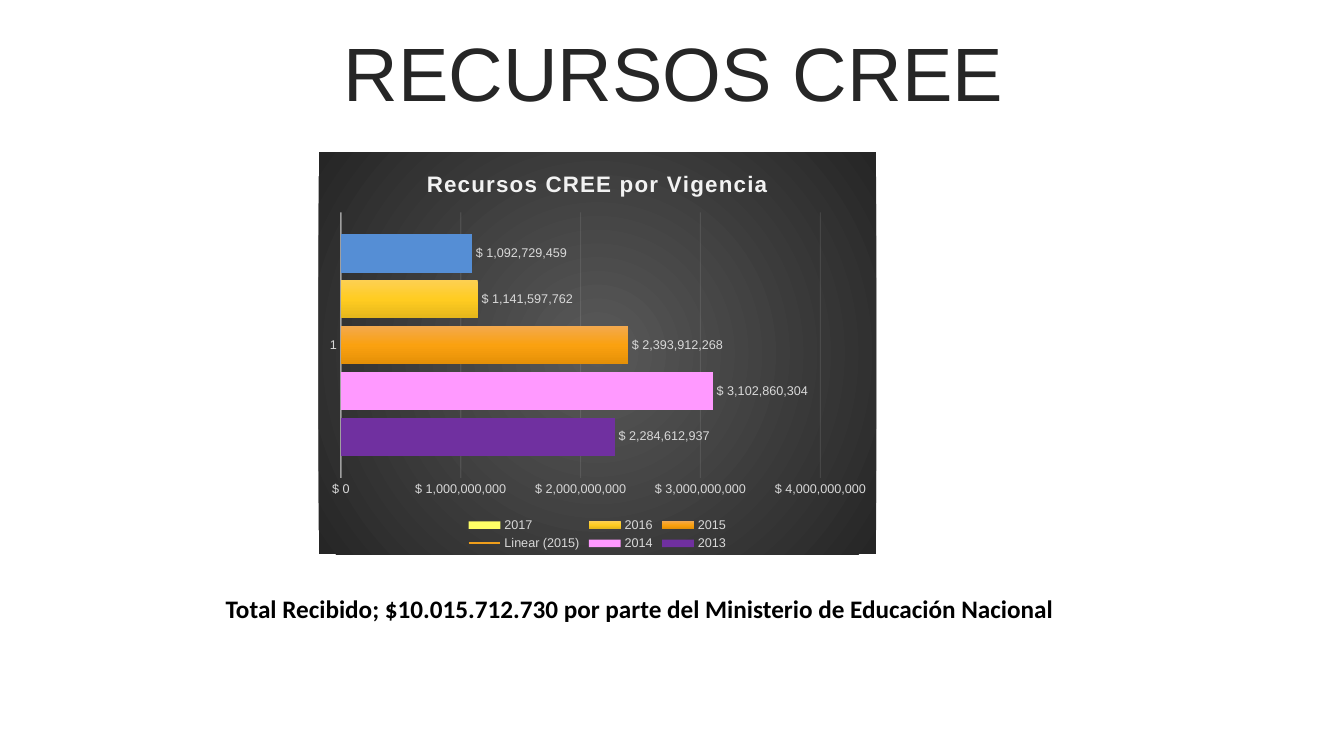
from lxml import etree
from pptx import Presentation
from pptx.chart.data import CategoryChartData
from pptx.dml.color import RGBColor
from pptx.enum import chart as ch, text
from pptx.oxml import parse_xml
from pptx.oxml.ns import nsdecls, qn
from pptx.util import Inches, Pt

WHITE = RGBColor(0xFF, 0xFF, 0xFF)
BLACK = RGBColor(0, 0, 0)
TITLE = RGBColor(0x26, 0x26, 0x26)
PALE = RGBColor(0xF2, 0xF2, 0xF2)
LABEL = RGBColor(0xD9, 0xD9, 0xD9)
PURPLE = RGBColor(0x70, 0x30, 0xA0)
PINK = RGBColor(0xFF, 0x99, 0xFF)
YELLOW = RGBColor(0xFF, 0xFF, 0x66)
BLUE = RGBColor(0x55, 0x8E, 0xD5)
TREND = RGBColor(0xEF, 0x9E, 0x1B)
ORANGES = (RGBColor(0xF3, 0xA9, 0x4E), RGBColor(0xFA, 0xA1, 0x10), RGBColor(0xE5, 0x90, 0x07))
GOLDS = (RGBColor(0xFD, 0xD0, 0x52), RGBColor(0xFF, 0xCC, 0x21), RGBColor(0xE5, 0xB6, 0x1B))
GREYS = (RGBColor(0x59, 0x59, 0x59), RGBColor(0x26, 0x26, 0x26))

PESOS = r"[$$-240A]\ #,##0;\-[$$-240A]\ #,##0"
RESOURCES = [
    ("2013", 2284612937, PURPLE),
    ("2014", 3102860304, PINK),
    ("2015", 2393912268, ORANGES),
    ("2016", 1141597762, GOLDS),
    ("2017", 1092729459, YELLOW),
]
LINEAR = '<a:lin ang="5400000" scaled="0"/>'
RADIAL = '<a:path path="circle"><a:fillToRect l="50000" t="50000" r="50000" b="50000"/></a:path>'


def set_font(font, size, color, name="Arial", bold=False):
    font.size, font.name, font.bold = Pt(size), name, bold
    font.color.rgb = color


def add_text(slide, box, words, size, color, name="Arial", bold=False, wrap=True):
    tf = slide.shapes.add_textbox(*map(Inches, box)).text_frame
    tf.word_wrap = wrap
    p = tf.paragraphs[0]
    p.text = words
    set_font(p.font, size, color, name, bold)
    return tf


def gradient(colors, direction):
    step = 100000 // (len(colors) - 1)
    stops = "".join(f'<a:gs pos="{i * step}"><a:srgbClr val="{c}"/></a:gs>'
                    for i, c in enumerate(colors))
    return parse_xml(f'<a:gradFill {nsdecls("a")} rotWithShape="1">'
                     f'<a:gsLst>{stops}</a:gsLst>{direction}</a:gradFill>')


def manual_layout(x, y, w, h, inner=False):
    target = '<c:layoutTarget val="inner"/>' if inner else ""
    sizes = "".join(f'<c:{k} val="{v}"/>' for k, v in zip("xywh", (x, y, w, h)))
    return parse_xml(f'<c:layout {nsdecls("c")}><c:manualLayout>{target}'
                     f'<c:xMode val="edge"/><c:yMode val="edge"/>{sizes}'
                     '</c:manualLayout></c:layout>')


def drop_layout(parent):
    for old in parent.findall(qn("c:layout")):
        parent.remove(old)


def style_line(line, width, opacity):
    line.width = Pt(width)
    line.color.rgb = PALE
    rgb = line.fill._xPr.find(".//" + qn("a:srgbClr"))
    etree.SubElement(rgb, qn("a:alpha")).set("val", str(opacity * 1000))


def style_series(series, color):
    if isinstance(color, RGBColor):
        series.format.fill.solid()
        series.format.fill.fore_color.rgb = color
    else:
        series._element.get_or_add_spPr().append(gradient(color, LINEAR))
    series.invert_if_negative = False
    labels = series.data_labels
    labels.show_value = True
    labels.number_format, labels.number_format_is_linked = PESOS, False
    labels.position = ch.XL_LABEL_POSITION.OUTSIDE_END
    set_font(labels.font, 9, LABEL)


def add_trend(series):
    series._element.find(qn("c:cat")).addprevious(parse_xml(
        f'<c:trendline {nsdecls("c", "a")}><c:spPr><a:ln w="{Pt(1.5)}"><a:solidFill>'
        f'<a:srgbClr val="{TREND}"/></a:solidFill></a:ln></c:spPr>'
        '<c:trendlineType val="linear"/><c:dispRSqr val="0"/><c:dispEq val="0"/></c:trendline>'))


def style_axes(chart):
    for axis in (chart.category_axis, chart.value_axis):
        axis.major_tick_mark = axis.minor_tick_mark = ch.XL_TICK_MARK.NONE
        set_font(axis.tick_labels.font, 9, LABEL)
    style_line(chart.category_axis.format.line, 1, 54)
    values = chart.value_axis
    values.format.line.fill.background()
    values.has_major_gridlines = True
    style_line(values.major_gridlines.format.line, 0.75, 10)
    values.tick_labels.number_format = PESOS
    values.tick_labels.number_format_is_linked = False


def style_legend(chart):
    chart.has_legend = True
    legend = chart.legend
    legend.position = ch.XL_LEGEND_POSITION.BOTTOM
    legend.include_in_layout = False
    set_font(legend.font, 9, LABEL)
    el = legend._element
    drop_layout(el)
    overlay = el.find(qn("c:overlay"))
    overlay.addprevious(parse_xml(f'<c:legendEntry {nsdecls("c")}><c:idx val="5"/>'
                                  '<c:delete val="1"/></c:legendEntry>'))
    overlay.addprevious(manual_layout(0.26, 0.9, 0.48, 0.1))


def style_title(chart):
    chart.has_title = True
    tf = chart.chart_title.text_frame
    tf.text = "Recursos CREE por Vigencia"
    r = tf.paragraphs[0].runs[0]
    set_font(r.font, 16, PALE, bold=True)
    r.font._element.set("spc", "100")
    chart.chart_title.include_in_layout = False


def add_resources_chart(slide, box):
    data = CategoryChartData()
    data.categories = ["1"]
    for year, value, _ in RESOURCES:
        data.add_series(year, [value])
    chart = slide.shapes.add_chart(ch.XL_CHART_TYPE.BAR_CLUSTERED,
                                   *map(Inches, box), data).chart
    set_font(chart.font, 10, BLACK)
    plot = chart.plots[0]
    plot.gap_width, plot.overlap, plot.vary_by_categories = 115, -20, False
    for series, (_, _, color) in zip(plot.series, RESOURCES):
        style_series(series, color)
    add_trend(plot.series[2])
    latest = plot.series[4].points[0].format.fill
    latest.solid()
    latest.fore_color.rgb = BLUE
    style_axes(chart)
    style_legend(chart)
    style_title(chart)

    root = chart._chartSpace
    area = root.find(".//" + qn("c:plotArea"))
    drop_layout(area)
    area.insert(0, manual_layout(0.04, 0.15, 0.86, 0.66, inner=True))
    frame = parse_xml(f'<c:spPr {nsdecls("c", "a")}><a:ln><a:noFill/></a:ln></c:spPr>')
    frame.insert(0, gradient(GREYS, RADIAL))
    root.find(qn("c:chart")).addnext(frame)


def main():
    prs = Presentation()
    prs.slide_width, prs.slide_height = Inches(13.33), Inches(7.5)
    slide = prs.slides.add_slide(prs.slide_layouts[6])
    slide.background.fill.solid()
    slide.background.fill.fore_color.rgb = WHITE

    tf = add_text(slide, (0.35, 0.37, 12.66, 0.79), "RECURSOS CREE", 54, TITLE)
    tf.vertical_anchor = text.MSO_ANCHOR.MIDDLE
    p = tf.paragraphs[0]
    p.alignment = text.PP_ALIGN.CENTER
    p.line_spacing, p.space_before = 0.9, Pt(10)

    add_resources_chart(slide, (3.16, 1.51, 5.53, 3.99))

    tf = add_text(slide, (2.14, 5.84, 8.49, 0.4),
                  "Total Recibido; $10.015.712.730 por parte del Ministerio de Educación Nacional",
                  18, BLACK, "Calibri", True, wrap=False)
    tf.auto_size = text.MSO_AUTO_SIZE.SHAPE_TO_FIT_TEXT
    prs.save("out.pptx")


if __name__ == "__main__":
    main()
